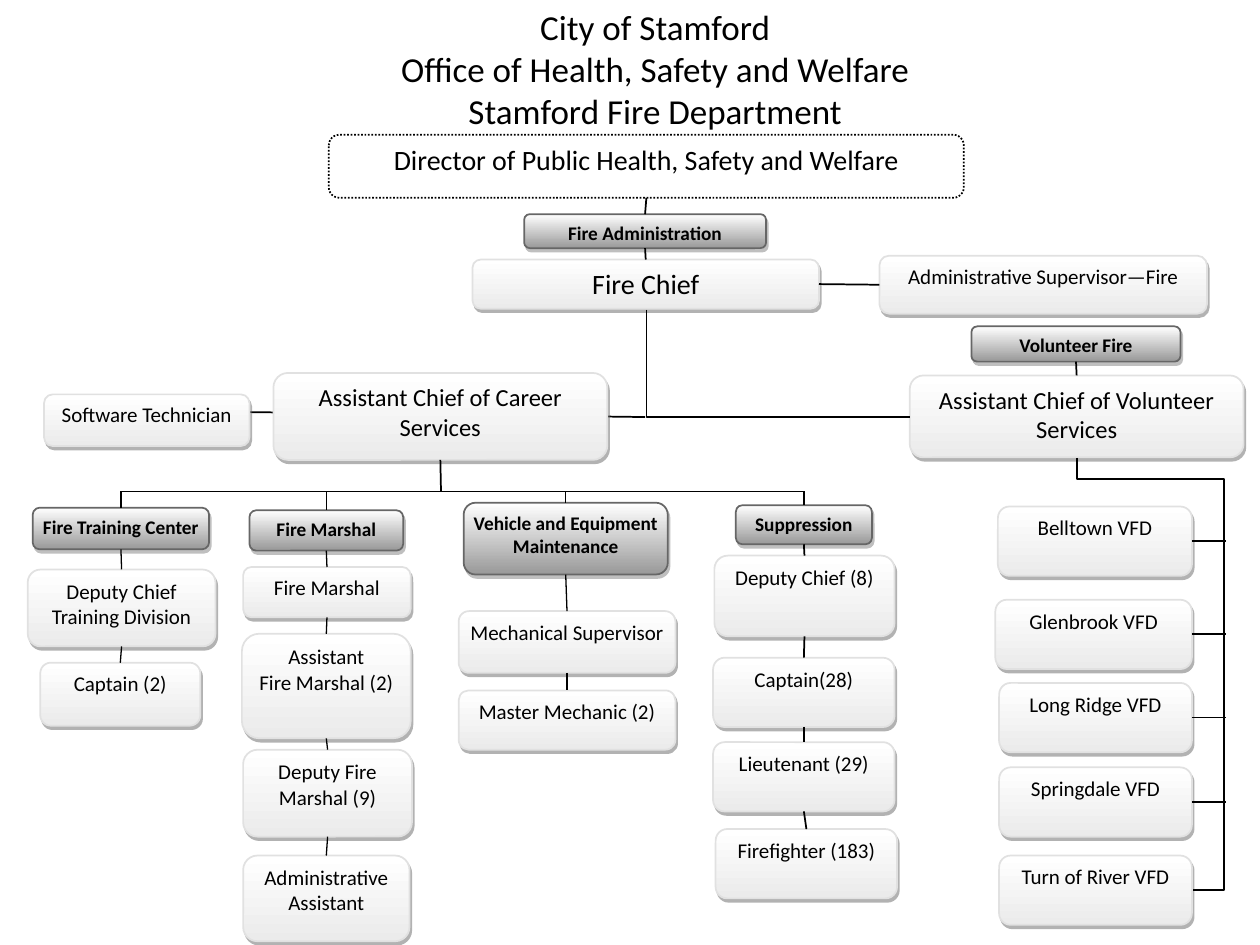
from lxml import etree
from pptx import Presentation
from pptx.dml.color import RGBColor
from pptx.enum.dml import MSO_LINE
from pptx.enum.shapes import MSO_CONNECTOR, MSO_SHAPE
from pptx.enum.text import MSO_ANCHOR, MSO_AUTO_SIZE, PP_ALIGN
from pptx.oxml.ns import qn
from pptx.util import Inches, Pt

ROUNDED = MSO_SHAPE.FLOWCHART_ALTERNATE_PROCESS
STRAIGHT, ELBOW = MSO_CONNECTOR.STRAIGHT, MSO_CONNECTOR.ELBOW
TOP, LEFT, BOTTOM, RIGHT = range(4)
FONT = "Calibri"
COLORS = {
    "text": "000000", "line": "000000", "white": "FFFFFF",
    "post_end": "EBEBEB", "post_line": "E1E1E1", "post_shadow": "666666",
    "unit_end": "999999", "unit_line": "666666", "unit_shadow": "808080",
}
RGB = {name: RGBColor.from_string(value) for name, value in COLORS.items()}

presentation = Presentation()
presentation.slide_width, presentation.slide_height = Inches(10), Inches(7.5)
slide = presentation.slides.add_slide(presentation.slide_layouts[5])


def write_text(shape, text, size, bold=False):
    frame = shape.text_frame
    frame.word_wrap = True
    frame.auto_size = MSO_AUTO_SIZE.NONE
    frame.vertical_anchor = MSO_ANCHOR.TOP
    frame.margin_left = frame.margin_right = Inches(0.04)
    frame.margin_top = frame.margin_bottom = Inches(0.04)
    for index, line in enumerate(text.split("\n")):
        paragraph = frame.add_paragraph() if index else frame.paragraphs[0]
        paragraph.alignment = PP_ALIGN.CENTER
        paragraph.space_before = Pt(0)
        run = paragraph.add_run()
        run.text = line
        run.font.name, run.font.size, run.font.bold = FONT, Pt(size), bold
        run.font.color.rgb = RGB["text"]


def connect(start, end, width=1, kind=STRAIGHT):
    """Join two ends, each a point (x, y) in inches or a (shape, side) pair."""
    connector = slide.shapes.add_connector(kind, 0, 0, 0, 0)
    # Free points are placed first, so that joined ends stay on their shapes.
    if isinstance(start[0], (int, float)):
        connector.begin_x, connector.begin_y = map(Inches, start)
    else:
        connector.begin_connect(*start)
    if isinstance(end[0], (int, float)):
        connector.end_x, connector.end_y = map(Inches, end)
    else:
        connector.end_connect(*end)
    connector.line.color.rgb = RGB["line"]
    connector.line.width = Pt(width)
    etree.SubElement(connector._element.spPr, qn("a:effectLst"))
    return connector


# Title
title = slide.shapes.title
title.left, title.top = Inches(1.98), Inches(0)
title.width, title.height = Inches(6.44), Inches(1.12)
title.fill.solid()
title.fill.fore_color.rgb = RGB["white"]
write_text(title, "City of Stamford\nOffice of Health, Safety and Welfare\n"
                  "Stamford Fire Department", 20)

# Line that passes behind the career assistant chief
connect((5.12, 3.31), (1.9, 3.27))

# Boxes: key, style, text, left, top, width, height, text size
BOXES = [
    ("director", "dotted", "Director of Public Health, Safety and Welfare",
     2.61, 1.07, 5.04, 0.5, 16),
    ("administration", "unit", "Fire Administration", 4.16, 1.7, 1.92, 0.27, 11),
    ("chief", "post", "Fire Chief", 3.75, 2.06, 2.75, 0.39, 16),
    ("supervisor", "post", "Administrative Supervisor—Fire", 6.98, 2.03, 2.6, 0.46, 12),
    ("volunteer fire", "unit", "Volunteer Fire", 7.71, 2.59, 1.66, 0.28, 11),
    ("career", "post", "Assistant Chief of Career\nServices", 2.17, 2.96, 2.65, 0.69, 14),
    ("volunteer", "post", "Assistant Chief of Volunteer\nServices",
     7.22, 2.98, 2.65, 0.65, 14),
    ("technician", "post", "Software Technician", 0.35, 3.13, 1.63, 0.41, 12),
    ("training 0", "unit", "Fire Training Center", 0.26, 4.03, 1.4, 0.33, 11),
    ("training 1", "post", "Deputy Chief\nTraining Division", 0.22, 4.52, 1.49, 0.61, 12),
    ("training 2", "post", "Captain (2)", 0.32, 5.26, 1.27, 0.5, 12),
    ("marshal 0", "unit", "Fire Marshal", 1.98, 4.05, 1.22, 0.32, 11),
    ("marshal 1", "post", "Fire Marshal", 1.93, 4.5, 1.33, 0.4, 12),
    ("marshal 2", "post", "Assistant\nFire Marshal (2)", 1.92, 5.03, 1.34, 0.83, 12),
    ("marshal 3", "post", "Deputy Fire\nMarshal (9)", 1.93, 5.95, 1.34, 0.69, 12),
    ("marshal 4", "post", "Administrative Assistant", 1.93, 6.79, 1.32, 0.68, 12),
    ("vehicle 0", "unit", "Vehicle and Equipment Maintenance", 3.68, 3.99, 1.62, 0.57, 11),
    ("vehicle 1", "post", "Mechanical Supervisor", 3.64, 4.85, 1.72, 0.49, 12),
    ("vehicle 2", "post", "Master Mechanic (2)", 3.64, 5.48, 1.72, 0.47, 12),
    ("suppression 0", "unit", "Suppression", 5.84, 4.01, 1.08, 0.31, 11),
    ("suppression 1", "post", "Deputy Chief (8)", 5.67, 4.41, 1.43, 0.64, 12),
    ("suppression 2", "post", "Captain(28)", 5.66, 5.22, 1.44, 0.55, 12),
    ("suppression 3", "post", "Lieutenant (29)", 5.66, 5.89, 1.44, 0.55, 12),
    ("suppression 4", "post", "Firefighter (183)", 5.68, 6.58, 1.44, 0.55, 12),
    ("company 0", "post", "Belltown VFD", 7.92, 4.02, 1.54, 0.55, 12),
    ("company 1", "post", "Glenbrook VFD", 7.9, 4.76, 1.56, 0.55, 12),
    ("company 2", "post", "Long Ridge VFD", 7.93, 5.42, 1.53, 0.55, 12),
    ("company 3", "post", "Springdale VFD", 7.93, 6.09, 1.53, 0.55, 12),
    ("company 4", "post", "Turn of River VFD", 7.93, 6.79, 1.53, 0.55, 12),
]
boxes = {}
for key, style, text, left, top, width, height, size in BOXES:
    box = slide.shapes.add_shape(ROUNDED, *map(Inches, (left, top, width, height)))
    box.shadow.inherit = False
    box.line.width = Pt(1)
    if style == "dotted":
        box.fill.solid()
        box.fill.fore_color.rgb = RGB["white"]
        box.line.color.rgb = RGB["line"]
        box.line.dash_style = MSO_LINE.ROUND_DOT
    else:
        box.fill.gradient()
        box.fill.gradient_angle = 270
        first_stop, last_stop = box.fill.gradient_stops
        first_stop.color.rgb = RGB["white"]
        last_stop.color.rgb = RGB[f"{style}_end"]
        box.line.color.rgb = RGB[f"{style}_line"]
        effects = box._element.spPr.find(qn("a:effectLst"))
        shadow = etree.SubElement(effects, qn("a:outerShdw"), blurRad="0",
                                  dist=str(Pt(2.2)), dir=str(63 * 60000),
                                  algn="ctr", rotWithShape="0")
        shade = etree.SubElement(shadow, qn("a:srgbClr"), val=COLORS[f"{style}_shadow"])
        etree.SubElement(shade, qn("a:alpha"), val="50000")
    write_text(box, text, size, bold=style == "unit")
    boxes[key] = box

# Upper levels
for upper, lower in [("director", "administration"), ("administration", "chief"),
                     ("volunteer fire", "volunteer")]:
    connect((boxes[upper], BOTTOM), (boxes[lower], TOP))
connect((boxes["chief"], RIGHT), (boxes["supervisor"], LEFT))

# Career units hang from one horizontal line
BUS_Y = 3.9
connect((boxes["career"], BOTTOM), (3.5, BUS_Y))
connect((0.96, BUS_Y), (6.39, BUS_Y), 0.75)
for unit, center, posts, weight in [("training", 0.96, 2, 0.75), ("marshal", 2.59, 4, 0.75),
                                    ("vehicle", 4.49, 2, 0.75), ("suppression", 6.38, 4, 1)]:
    connect((center, BUS_Y), (boxes[f"{unit} 0"], TOP), weight)
    for level in range(posts):
        connect((boxes[f"{unit} {level}"], BOTTOM), (boxes[f"{unit} {level + 1}"], TOP), weight)

# Volunteer companies: the bent line below ends at the last one
for number in range(4):
    company = boxes[f"company {number}"]
    middle = (company.top + company.height / 2) / Inches(1)
    connect((company, RIGHT), (9.73, middle))

# Bent lines turned by 270 degrees: start, end, preset, bends, left, top, width, height
for start, end, preset, bends, *frame in [
    ((boxes["chief"], BOTTOM), (boxes["volunteer"], LEFT), "bentConnector2", [],
     5.75, 1.84, 0.85, 2.09),
    ((boxes["volunteer"], BOTTOM), (boxes["company 4"], RIGHT), "bentConnector4",
     [4900, 127100], 7.29, 4.89, 3.43, 0.92),
]:
    bent = connect(start, end, kind=ELBOW)
    bent.left, bent.top, bent.width, bent.height = map(Inches, frame)
    transform = bent._element.spPr.find(qn("a:xfrm"))
    transform.attrib.pop("flipV", None)
    transform.set("rot", str(270 * 60000))
    transform.set("flipH", "1")
    geometry = bent._element.spPr.find(qn("a:prstGeom"))
    geometry.set("prst", preset)
    adjustments = geometry.find(qn("a:avLst"))
    for index, bend in enumerate(bends, 1):
        etree.SubElement(adjustments, qn("a:gd"), name=f"adj{index}", fmla=f"val {bend}")

presentation.save("out.pptx")
